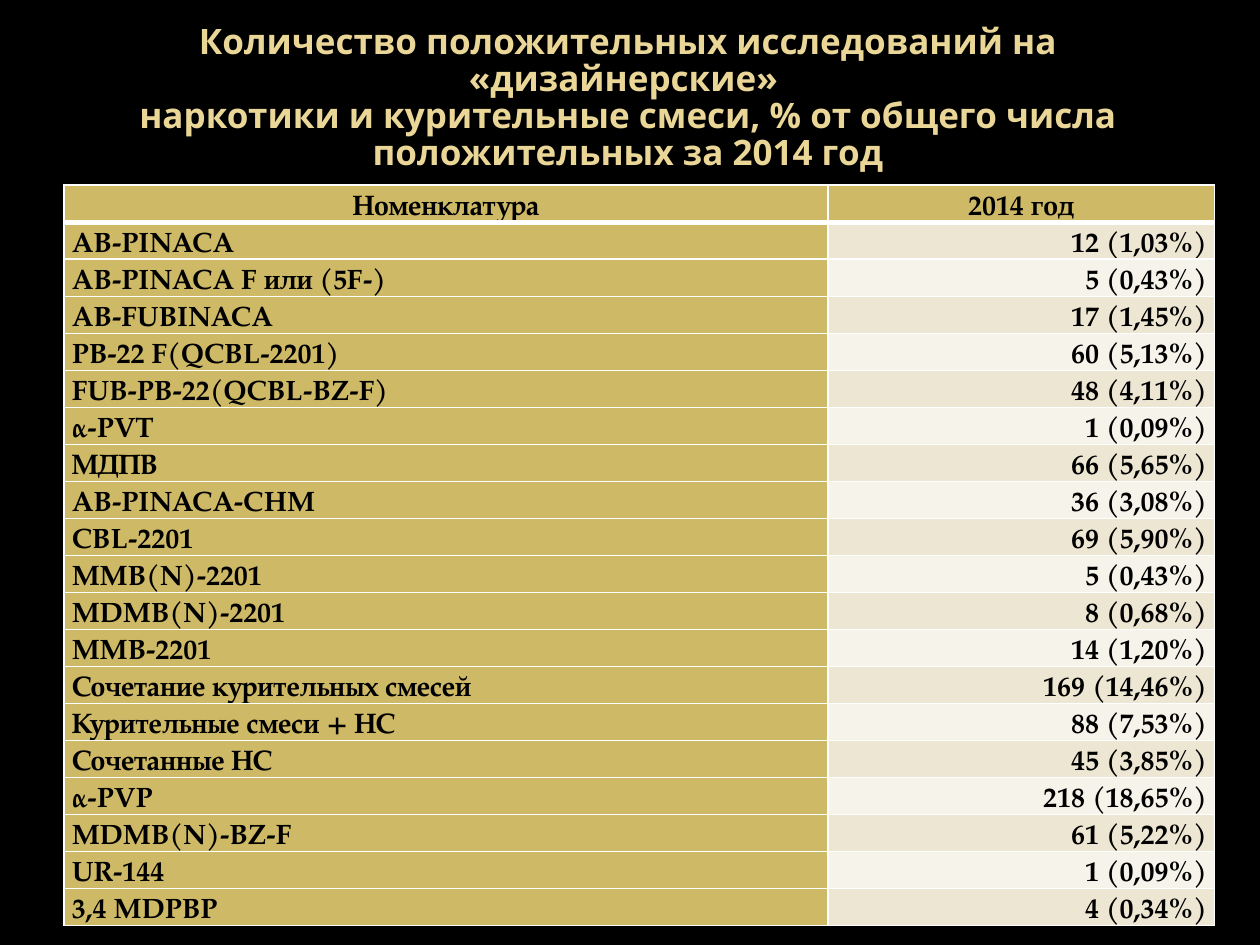
"""Build a slide with a table of positive test results for 2014."""
from dataclasses import dataclass

from lxml import etree
from pptx import Presentation
from pptx import util as u
from pptx.dml.color import RGBColor
from pptx.enum import text
from pptx.oxml import ns

TITLE = (
    "Количество положительных исследований на «дизайнерские» \v"
    "наркотики и курительные смеси, % от общего числа положительных за 2014 год"
)
ROWS = [
    ("Номенклатура", "2014 год"),
    ("AB-PINACA", "12 (1,03%)"),
    ("AB-PINACA F или (5F-)", "5 (0,43%)"),
    ("AB-FUBINACA", "17 (1,45%)"),
    ("PB-22 F(QCBL-2201)", "60 (5,13%)"),
    ("FUB-PB-22(QCBL-BZ-F)", "48 (4,11%)"),
    ("α-PVТ", "1 (0,09%)"),
    ("МДПВ", "66 (5,65%)"),
    ("AB-PINACA-CHM", "36 (3,08%)"),
    ("CBL-2201", "69 (5,90%)"),
    ("MMB(N)-2201", "5 (0,43%)"),
    ("MDMB(N)-2201", "8 (0,68%)"),
    ("MMB-2201", "14 (1,20%)"),
    ("Сочетание курительных смесей", "169 (14,46%)"),
    ("Курительные смеси + НС", "88 (7,53%)"),
    ("Сочетанные НС", "45 (3,85%)"),
    ("α-PVP", "218 (18,65%)"),
    ("MDMB(N)-BZ-F", "61 (5,22%)"),
    ("UR-144", "1 (0,09%)"),
    ("3,4 MDPBP", "4 (0,34%)"),
]
COLUMNS = (6.06, 3.07)
ALIGNMENTS = (text.PP_ALIGN.LEFT, text.PP_ALIGN.RIGHT)


@dataclass(frozen=True)
class Theme:
    background: str = "000000"
    title: str = "EAD696"
    ink: str = "000000"
    border: str = "FFFFFF"
    accent: str = "CEB966"
    bands: tuple = ("F6F3EA", "EDE6D3")
    title_font: str = "Open Sans"
    table_font: str = "TeX Gyre Pagella"
    title_size: int = 20
    table_size: int = 16


THEME = Theme()


def style(para, font, size, color, align, spacing):
    para.font.name = font
    para.font.size = u.Pt(size)
    para.font.bold = True
    para.font.color.rgb = RGBColor.from_string(color)
    para.alignment = align
    para.line_spacing = spacing


def add_borders(cell, bottom, top):
    properties = cell._tc.get_or_add_tcPr()
    for side, width in (("L", 1), ("R", 1), ("T", top), ("B", bottom)):
        line = etree.SubElement(properties, ns.qn(f"a:ln{side}"), w=str(u.Pt(width)))
        fill = etree.SubElement(line, ns.qn("a:solidFill"))
        etree.SubElement(fill, ns.qn("a:srgbClr"), val=THEME.border)


def add_title(slide):
    title = slide.shapes.title
    title.left, title.top = u.Inches(0.51), u.Inches(0.21)
    title.width, title.height = u.Inches(8.95), u.Inches(1.15)
    frame = title.text_frame
    frame.text = TITLE
    frame.word_wrap = True
    frame.auto_size = text.MSO_AUTO_SIZE.NONE
    frame.vertical_anchor = text.MSO_ANCHOR.MIDDLE
    style(frame.paragraphs[0], THEME.title_font, THEME.title_size, THEME.title,
          text.PP_ALIGN.CENTER, 0.88)


def fill_cell(cell, value, row, column):
    header = row == 0
    cell.text = value
    cell.vertical_anchor = text.MSO_ANCHOR.BOTTOM
    cell.margin_left = cell.margin_right = u.Inches(0.06)
    cell.margin_top = cell.margin_bottom = 0
    style(cell.text_frame.paragraphs[0], THEME.table_font, THEME.table_size, THEME.ink,
          text.PP_ALIGN.CENTER if header else ALIGNMENTS[column], 1.15)
    add_borders(cell, bottom=3 if header else 1, top=3 if row == 1 else 1)
    cell.fill.solid()
    color = THEME.accent if header or column == 0 else THEME.bands[row % 2]
    cell.fill.fore_color.rgb = RGBColor.from_string(color)


def add_results(slide):
    table = slide.shapes.add_table(
        len(ROWS), len(COLUMNS), u.Inches(0.51), u.Inches(1.47),
        u.Inches(sum(COLUMNS)), u.Inches(5.88)).table
    for column, width in zip(table.columns, COLUMNS):
        column.width = u.Inches(width)
    for row, values in enumerate(ROWS):
        for column, value in enumerate(values):
            fill_cell(table.cell(row, column), value, row, column)


def main():
    deck = Presentation()
    deck.slide_width, deck.slide_height = u.Inches(10), u.Inches(7.5)
    slide = deck.slides.add_slide(deck.slide_layouts.get_by_name("Title Only"))
    slide.background.fill.solid()
    slide.background.fill.fore_color.rgb = RGBColor.from_string(THEME.background)
    add_title(slide)
    add_results(slide)
    deck.save("out.pptx")


if __name__ == "__main__":
    main()
